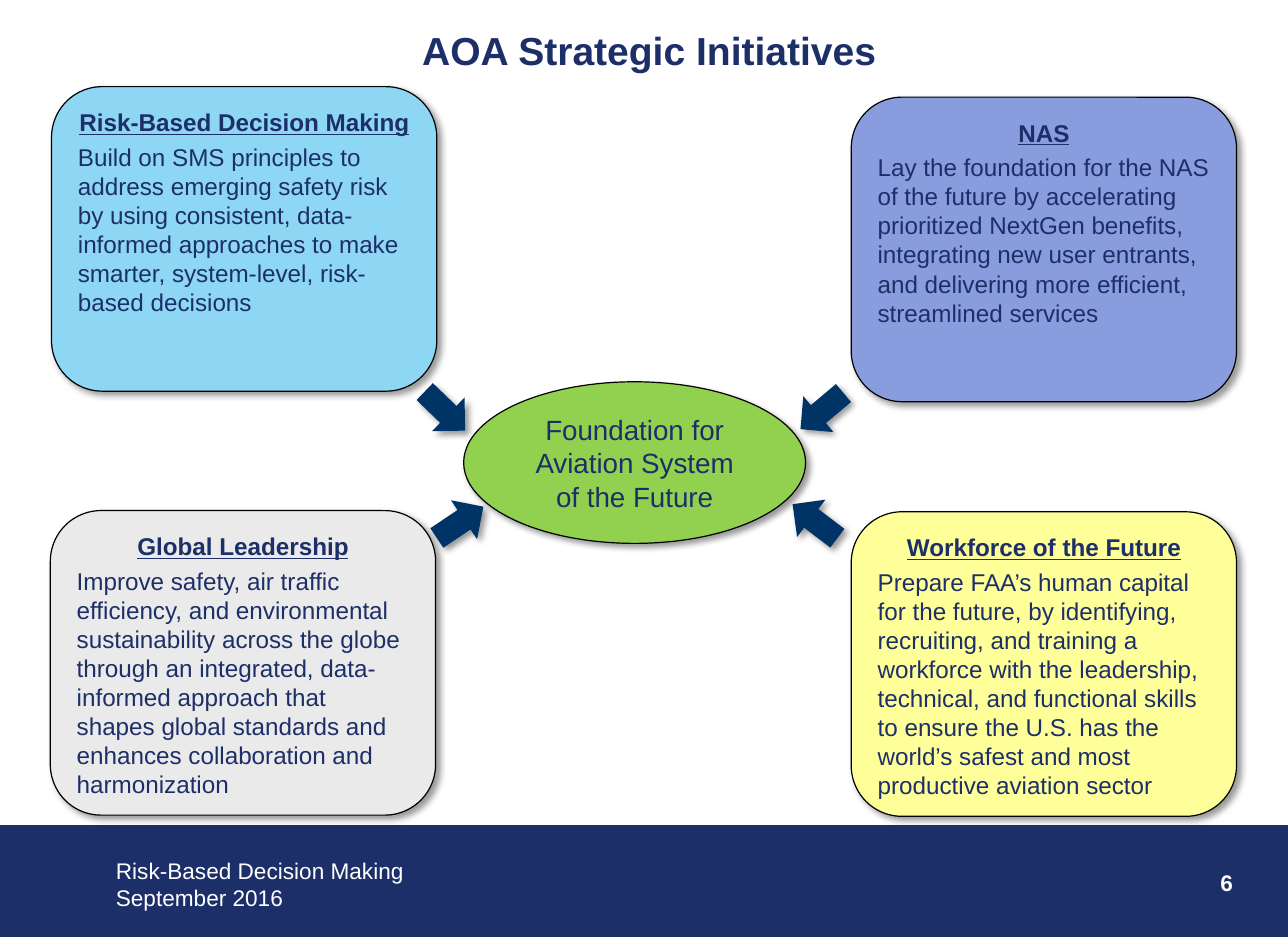
from lxml import etree
from pptx import Presentation
from pptx.dml.color import RGBColor
from pptx.enum.shapes import MSO_SHAPE
from pptx.enum.text import MSO_ANCHOR, PP_ALIGN
from pptx.oxml import parse_xml
from pptx.util import Inches, Pt

NAVY = RGBColor(0x1D, 0x2F, 0x68)
ARROW_BLUE = RGBColor(0x00, 0x33, 0x66)
SKY = RGBColor(0x8D, 0xD6, 0xF4)
PERIWINKLE = RGBColor(0x89, 0x9D, 0xDE)
GREY = RGBColor(0xEA, 0xEA, 0xEA)
YELLOW = RGBColor(0xFF, 0xFF, 0x99)
GREEN = RGBColor(0x92, 0xD0, 0x50)
BLACK = RGBColor(0, 0, 0)
WHITE = RGBColor(0xFF, 0xFF, 0xFF)

TITLE = "AOA Strategic Initiatives"
FOUNDATION = "Foundation for Aviation System of the Future"
FOOTER = ("Risk-Based Decision Making", "September 2016")
PAGE = "6"

# heading, body, fill, card corner, arrow corner, arrow angle
INITIATIVES = [
    ("Risk-Based Decision Making",
     "Build on SMS principles to address emerging safety risk by using "
     "consistent, data-informed approaches to make smarter, system-level, "
     "risk-based decisions",
     SKY, (0.44, 0.74), (3.56, 3.31), 44),
    ("NAS",
     "Lay the foundation for the NAS of the future by accelerating "
     "prioritized NextGen benefits, integrating new user entrants, and "
     "delivering more efficient, streamlined services",
     PERIWINKLE, (7.27, 0.83), (6.78, 3.31), 140),
    ("Global Leadership",
     "Improve safety, air traffic efficiency, and environmental "
     "sustainability across the globe through an integrated, data-informed "
     "approach that shapes global standards and enhances collaboration and "
     "harmonization",
     GREY, (0.43, 4.36), (3.69, 4.26), 326.1),
    ("Workforce of the Future",
     "Prepare FAA’s human capital for the future, by identifying, "
     "recruiting, and training a workforce with the leadership, technical, "
     "and functional skills to ensure the U.S. has the world’s safest and "
     "most productive aviation sector",
     YELLOW, (7.27, 4.37), (6.72, 4.25), 217.2),
]

SLIDE_SIZE = (11, 8)
CARD_SIZE = (3.29, 2.6)
ARROW_SIZE = (0.48, 0.4)
BAND_TOP = 7.05

SHADOW = (
    '<a:effectLst xmlns:a="http://schemas.openxmlformats.org/drawingml/2006/main">'
    '<a:outerShdw blurRad="50800" dist="38100" dir="2700000" algn="tl" rotWithShape="0">'
    '<a:srgbClr val="000000"><a:alpha val="40000"/></a:srgbClr>'
    '</a:outerShdw></a:effectLst>')


def box(corner, size):
    return [Inches(length) for length in (*corner, *size)]


def add_figure(slide, preset, corner, size, fill, outline=None, shadow=True):
    figure = slide.shapes.add_shape(preset, *box(corner, size))
    figure.fill.solid()
    figure.fill.fore_color.rgb = fill
    if outline is None:
        figure.line.fill.background()
    else:
        figure.line.color.rgb = outline
        figure.line.width = Pt(0.75)
    figure.shadow.inherit = False
    if shadow:
        effects = figure._element.spPr.find("{*}effectLst")
        effects.getparent().replace(effects, parse_xml(SHADOW))
    return figure


def write(frame, lines, size, color, align=PP_ALIGN.LEFT, bold=False,
          before=0, anchor=MSO_ANCHOR.TOP):
    frame.word_wrap = True
    frame.vertical_anchor = anchor
    frame.text = "\n".join(lines)
    for paragraph in frame.paragraphs:
        paragraph.alignment = align
        paragraph.space_before = Pt(before)
        for run in paragraph.runs:
            run.font.name = "Arial"
            run.font.size = Pt(size)
            run.font.bold = bold
            run.font.color.rgb = color


def add_initiative(slide, heading, body, fill, corner, arrow_corner, angle):
    card = add_figure(slide, MSO_SHAPE.ROUNDED_RECTANGLE, corner, CARD_SIZE,
                      fill, BLACK)
    write(card.text_frame, (heading, body), 14.9, NAVY, before=3.4)
    first = card.text_frame.paragraphs[0]
    first.alignment = PP_ALIGN.CENTER
    first.runs[0].font.bold = True
    first.runs[0].font.underline = True
    arrow = add_figure(slide, MSO_SHAPE.RIGHT_ARROW, arrow_corner, ARROW_SIZE,
                       ARROW_BLUE)
    arrow.rotation = angle


def add_footer(slide):
    width, height = SLIDE_SIZE
    add_figure(slide, MSO_SHAPE.RECTANGLE, (0, BAND_TOP),
               (width, height - BAND_TOP), NAVY, NAVY, shadow=False)
    page = slide.shapes.add_textbox(*box((8.35, 7.36), (2.29, 0.53)))
    write(page.text_frame, (PAGE,), 13.9, WHITE, PP_ALIGN.RIGHT, bold=True)
    page.text_frame.margin_top = Inches(0.06)
    caption = slide.shapes.add_textbox(*box((0.88, 7.27), (5.35, 0.57)))
    write(caption.text_frame, FOOTER, 13.9, WHITE)
    for label in (page, caption):
        label.text_frame.margin_left = label.text_frame.margin_right = Inches(0.11)


def main():
    deck = Presentation()
    deck.slide_width, deck.slide_height = map(Inches, SLIDE_SIZE)
    slide = deck.slides.add_slide(deck.slide_layouts[5])
    add_footer(slide)

    title = slide.shapes.title
    title.left, title.top, title.width, title.height = box((3.08, 0.05), (4.93, 0.76))
    write(title.text_frame, (TITLE,), 24, NAVY, PP_ALIGN.CENTER, bold=True,
          anchor=MSO_ANCHOR.MIDDLE)

    for initiative in INITIATIVES:
        add_initiative(slide, *initiative)

    hub = add_figure(slide, MSO_SHAPE.OVAL, (3.96, 3.26), (2.92, 1.38), GREEN, BLACK)
    write(hub.text_frame, (FOUNDATION,), 17.1, NAVY, PP_ALIGN.CENTER, before=3.4,
          anchor=MSO_ANCHOR.MIDDLE)
    deck.save("out.pptx")


if __name__ == "__main__":
    main()
